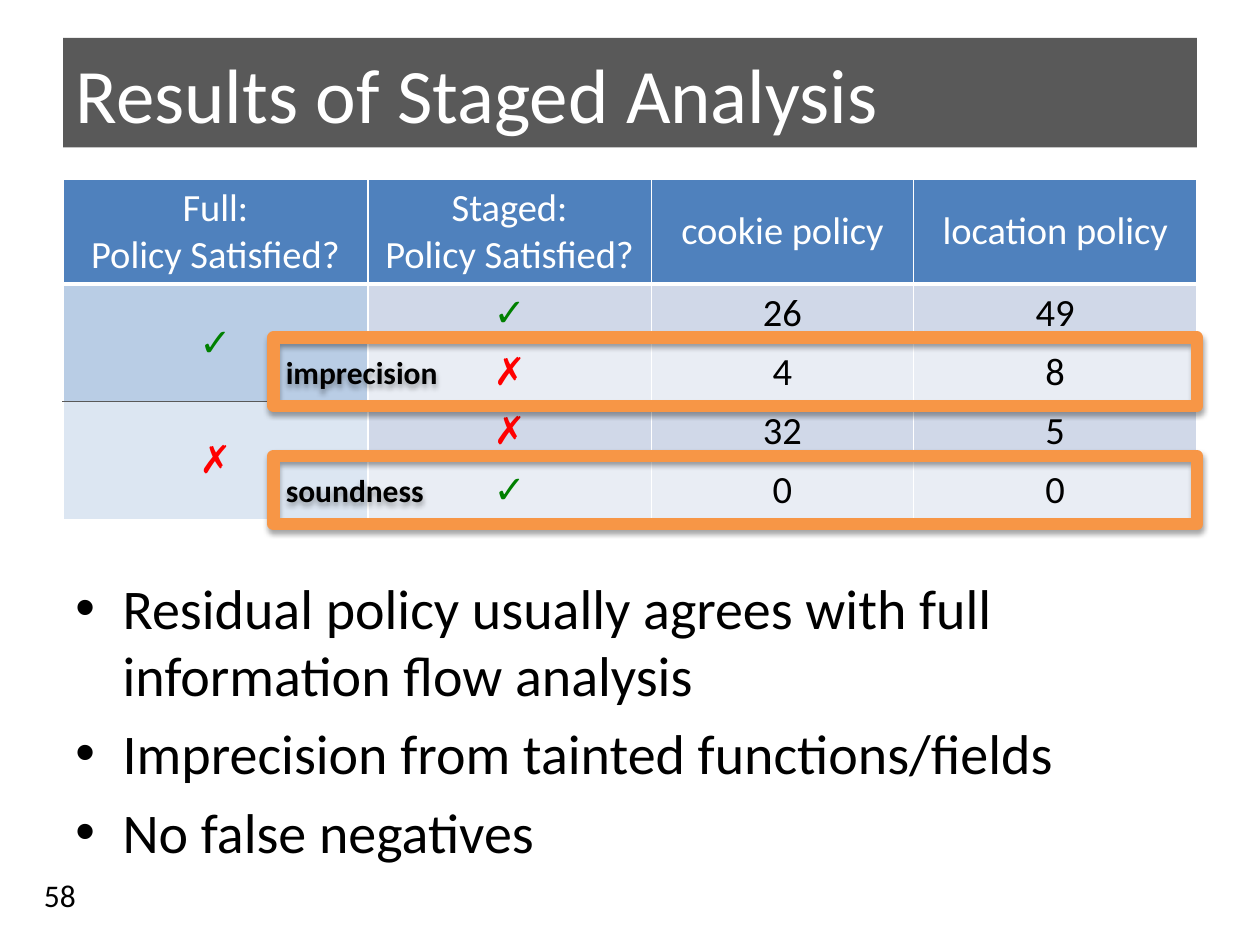
from dataclasses import dataclass

from lxml.etree import SubElement as Sub
from pptx import Presentation
from pptx.dml.color import RGBColor as RGB
from pptx.enum.shapes import MSO_SHAPE as Shape
from pptx.enum.text import MSO_ANCHOR as Anchor, PP_ALIGN as Align
from pptx.oxml.ns import qn
from pptx.util import Inches, Pt


@dataclass(frozen=True)
class Theme:
    font: str = "Calibri"
    sign: str = "Arial"
    ink: str = "000000"
    white: str = "FFFFFF"
    gray: str = "595959"
    head: str = "4F81BD"
    mark: str = "F79646"
    yes: str = "008000"
    no: str = "FF0000"
    bands: tuple = ("D0D8E8", "E9EDF4")
    sides: tuple = ("B9CDE5", "DCE6F2")
    title: int = 44
    body: int = 32
    cell: int = 22
    note: int = 18


def unit(n):
    """Length of n steps on a grid of 40 columns by 30 rows."""
    return Inches(n / 4)


class Deck:
    def __init__(self, theme):
        self.look = theme
        self.prs = Presentation()
        self.prs.slide_width, self.prs.slide_height = unit(40), unit(30)
        self.slide = self.prs.slides.add_slide(self.prs.slide_layouts[5])

    def style(self, para, size, color=None, align=Align.LEFT, font=None, bold=False):
        para.alignment = align
        para.font.name = font or self.look.font
        para.font.size = Pt(size)
        para.font.bold = bold
        para.font.color.rgb = RGB.from_string(color or self.look.ink)

    def title(self, text, x, y, w, h):
        box = self.slide.shapes.title
        box.left, box.top, box.width, box.height = map(unit, (x, y, w, h))
        box.fill.solid()
        box.fill.fore_color.rgb = RGB.from_string(self.look.gray)
        box.text_frame.text = text
        box.text_frame.vertical_anchor = Anchor.MIDDLE
        self.style(box.text_frame.paragraphs[0], self.look.title, self.look.white)

    def text(self, lines, x, y, w, h, size, anchor=Anchor.TOP, dots=False):
        box = self.slide.shapes.add_textbox(*map(unit, (x, y, w, h)))
        frame = box.text_frame
        frame.word_wrap = True
        frame.vertical_anchor = anchor
        frame.text = "\n".join(lines)
        for para in frame.paragraphs:
            self.style(para, size)
            if dots:
                para.space_before = Pt(size * 0.2)
                props = para._p.get_or_add_pPr()
                props.set("marL", str(unit(1.5)))
                props.set("indent", str(-unit(1.5)))
                Sub(props, qn("a:buFont"), typeface=self.look.sign)
                Sub(props, qn("a:buChar"), char="•")

    def edges(self, cell, top, bottom):
        white = (self.look.white, 1)
        sides = {"lnL": white, "lnR": white, "lnT": top or white, "lnB": bottom or white}
        for tag, (color, width) in sides.items():
            line = Sub(cell._tc.get_or_add_tcPr(), qn("a:" + tag), w=str(Pt(width)))
            Sub(Sub(line, qn("a:solidFill")), qn("a:srgbClr"), val=color)

    def cell(self, cell, text, fill, color=None, top=None, bottom=None):
        look = self.look
        signs = {"✓": look.yes, "✗": look.no}
        self.edges(cell, top, bottom)
        cell.fill.solid()
        cell.fill.fore_color.rgb = RGB.from_string(fill)
        cell.vertical_anchor = Anchor.MIDDLE
        para = cell.text_frame.paragraphs[0]
        para.text = text
        self.style(para, look.cell, signs.get(text, color), Align.CENTER,
                   look.sign if text in signs else None)

    def table(self, heads, rows, x, y, widths, high):
        look = self.look
        count = len(rows) + 1
        grid = self.slide.shapes.add_table(
            count, len(heads), unit(x), unit(y), unit(sum(widths)), unit(high * count)).table
        for col, width in zip(grid.columns, widths):
            col.width = unit(width)
        for row in grid.rows:
            row.height = unit(high)
        rule, split = (look.white, 3), (look.gray, 1)
        for c, head in enumerate(heads):
            self.cell(grid.cell(0, c), head, look.head, look.white, bottom=rule)
        for r, row in enumerate(rows):
            # Rows come in pairs that share the first column
            top = {0: rule, 2: split}.get(r)
            bottom = split if r == 1 else None
            for c, text in enumerate(row):
                fill = look.bands[r % 2] if c else look.sides[r // 2]
                self.cell(grid.cell(r + 1, c), text, fill, top=top, bottom=bottom)
        for r in range(1, count, 2):
            grid.cell(r, 0).merge(grid.cell(r + 1, 0))

    def frame(self, text, x, y, w, h):
        look = self.look
        box = self.slide.shapes.add_shape(Shape.RECTANGLE, *map(unit, (x, y, w, h)))
        box.fill.background()
        box.line.color.rgb = RGB.from_string(look.mark)
        box.line.width = Pt(7)
        box.text_frame.text = text
        box.text_frame.vertical_anchor = Anchor.MIDDLE
        self.style(box.text_frame.paragraphs[0], look.note, bold=True)
        # Soft shadow straight below
        box.shadow.inherit = False
        effects = box._element.spPr.find(qn("a:effectLst"))
        shade = Sub(effects, qn("a:outerShdw"), blurRad=str(Pt(3.1)),
                    dist=str(Pt(1.8)), dir="5400000", rotWithShape="0")
        Sub(Sub(shade, qn("a:srgbClr"), val=look.ink), qn("a:alpha"), val="35000")


def main():
    look = Theme()
    deck = Deck(look)
    deck.title("Results of Staged Analysis", 2, 1.2, 36, 3.48)

    # Main points and page number
    deck.text(["Residual policy usually agrees with full information flow analysis",
               "Imprecision from tainted functions/fields",
               "No false negatives"], 2, 18, 36, 10.68, look.body, dots=True)
    deck.text(["58"], 1, 27.6, 9.32, 1.6, look.note, Anchor.BOTTOM)

    # Full against staged results
    heads = ["Full:\vPolicy Satisfied?", "Staged:\vPolicy Satisfied?",
             "cookie policy", "location policy"]
    rows = [("✓", "✓", "26", "49"),
            ("", "✗", "4", "8"),
            ("✗", "✗", "32", "5"),
            ("", "✓", "0", "0")]
    deck.table(heads, rows, 2, 5.68, (9.68, 9, 8.32, 9), 1.64)

    # Frames around the rows that disagree
    for i, name in enumerate(("imprecision", "soundness")):
        deck.frame(name, 8.68, 10.72 + 3.76 * i, 29.32, 2.16)

    deck.prs.save("out.pptx")


if __name__ == "__main__":
    main()
